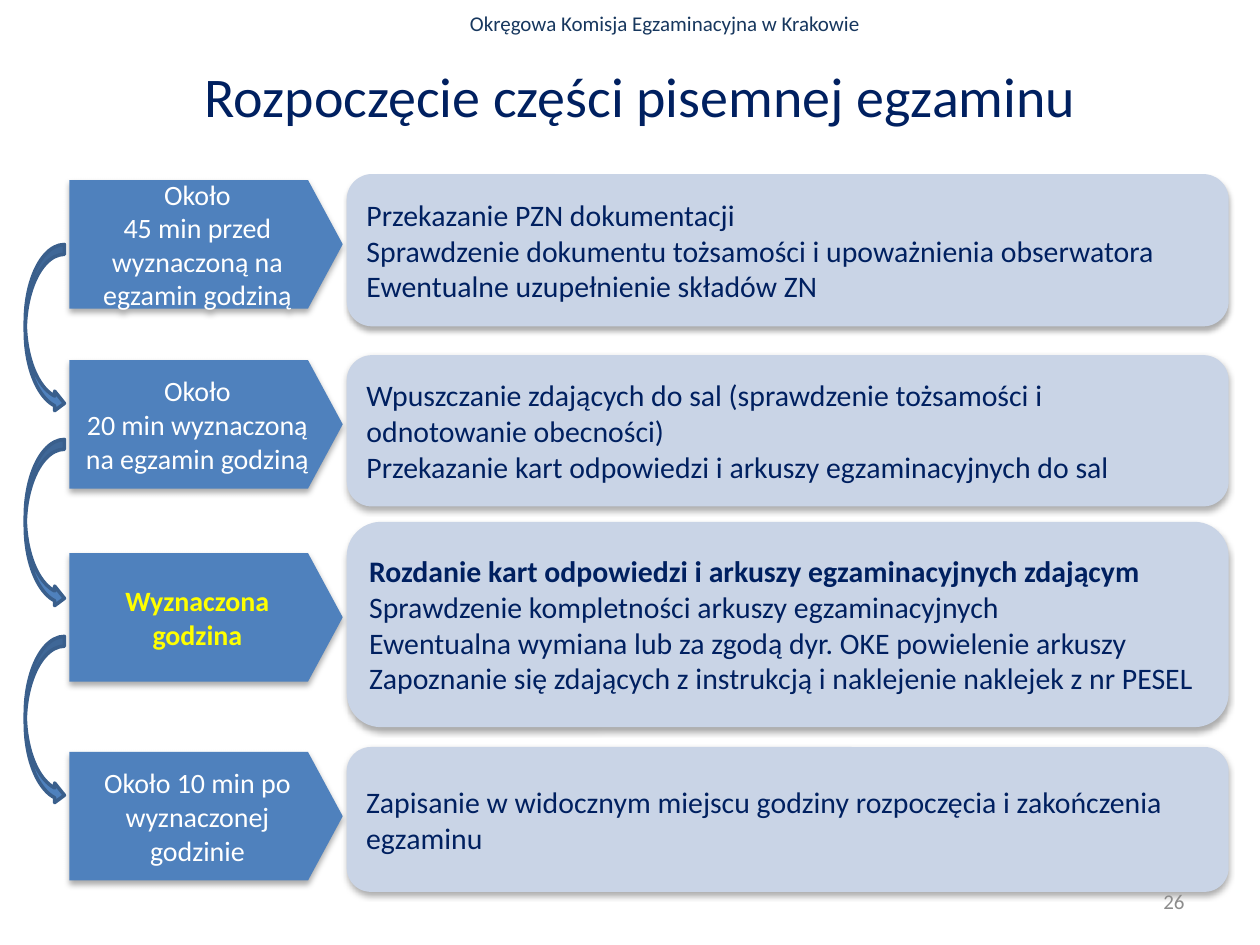
from lxml import etree
from pptx import Presentation
from pptx import util as u
from pptx.dml.color import RGBColor
from pptx.enum import shapes, text
from pptx.oxml.ns import qn

NAVY = RGBColor(0x00, 0x20, 0x60)
HEADER_BLUE = RGBColor(0x17, 0x37, 0x5E)
BLUE = RGBColor(0x4F, 0x81, 0xBD)
DARK_BLUE = RGBColor(0x3A, 0x5F, 0x8C)
PALE_BLUE = RGBColor(0xC9, 0xD4, 0xE6)
WHITE = RGBColor(0xFF, 0xFF, 0xFF)
YELLOW = RGBColor(0xFF, 0xFF, 0x00)
GREY = RGBColor(0x8C, 0x8C, 0x8C)

FONT = "Calibri"
PLATE_LEFT, PLATE_WIDTH, PLATE_HEIGHT = 1.4, 5.51, 2.59
CARD_LEFT, CARD_WIDTH = 6.99, 17.78
ARROW_LEFT, ARROW_WIDTH, ARROW_HEIGHT = 0.51, 0.79, 3.4
ARROW_TOPS = (4.93, 8.86, 12.83)

# Each stage: plate top, plate lines, card top, card height, card lines, highlighted
STAGES = [
    (3.63, ["Około", "45 min przed wyznaczoną na egzamin godziną"],
     3.51, 3.07,
     ["Przekazanie PZN dokumentacji",
      "Sprawdzenie dokumentu tożsamości i upoważnienia obserwatora",
      "Ewentualne uzupełnienie składów ZN"], False),
    (7.26, ["Około", "20 min wyznaczoną na egzamin godziną"],
     7.16, 3.05,
     ["Wpuszczanie zdających do sal (sprawdzenie tożsamości i odnotowanie obecności)",
      "Przekazanie kart odpowiedzi i arkuszy egzaminacyjnych do sal"], False),
    (11.15, ["Wyznaczona", "godzina"],
     10.52, 4.14,
     ["Rozdanie kart odpowiedzi i arkuszy egzaminacyjnych zdającym",
      "Sprawdzenie kompletności arkuszy egzaminacyjnych",
      "Ewentualna wymiana lub za zgodą dyr. OKE powielenie arkuszy",
      "Zapoznanie się zdających z instrukcją i naklejenie naklejek z nr PESEL"], True),
    (15.16, ["Około 10 min po wyznaczonej godzinie"],
     15.06, 2.92,
     ["Zapisanie w widocznym miejscu godziny rozpoczęcia i zakończenia egzaminu"], False),
]


def write_text(shape, lines, *, size, color, align=text.PP_ALIGN.LEFT,
               anchor=text.MSO_ANCHOR.MIDDLE, bold_lines=0):
    """Fill a shape with one paragraph per line; the first bold_lines are bold."""
    frame = shape.text_frame
    frame.word_wrap = True
    frame.vertical_anchor = anchor
    for index, line in enumerate(lines):
        paragraph = frame.paragraphs[0] if index == 0 else frame.add_paragraph()
        paragraph.alignment = align
        run = paragraph.add_run()
        run.text = line
        run.font.name = FONT
        run.font.size = u.Pt(size)
        run.font.bold = index < bold_lines
        run.font.color.rgb = color


def add_label(slide, box, line, **text_format):
    shape = slide.shapes.add_textbox(*map(u.Cm, box))
    write_text(shape, [line], **text_format)


def add_filled_shape(slide, kind, box, fill):
    shape = slide.shapes.add_shape(kind, *map(u.Cm, box))
    shape.shadow.inherit = False
    shape.fill.solid()
    shape.fill.fore_color.rgb = fill
    shape.line.fill.background()
    return shape


def add_soft_shadow(shape):
    effects = shape._element.spPr.find(qn("a:effectLst"))
    shadow = etree.SubElement(effects, qn("a:outerShdw"), blurRad=str(u.Pt(3.5)),
                              dist=str(u.Pt(2.2)), dir="5400000", rotWithShape="0")
    color = etree.SubElement(shadow, qn("a:srgbClr"), val="000000")
    etree.SubElement(color, qn("a:alpha"), val="32000")


def add_plate(slide, top, lines, highlighted):
    box = (PLATE_LEFT, top, PLATE_WIDTH, PLATE_HEIGHT)
    plate = add_filled_shape(slide, shapes.MSO_SHAPE.PENTAGON, box, BLUE)
    plate.adjustments[0] = 0.27
    add_soft_shadow(plate)
    write_text(plate, lines, size=16, color=YELLOW if highlighted else WHITE,
               align=text.PP_ALIGN.CENTER, bold_lines=len(lines) if highlighted else 0)


def add_card(slide, top, height, lines, highlighted):
    box = (CARD_LEFT, top, CARD_WIDTH, height)
    card = add_filled_shape(slide, shapes.MSO_SHAPE.ROUNDED_RECTANGLE, box, PALE_BLUE)
    add_soft_shadow(card)
    write_text(card, lines, size=17, color=NAVY, bold_lines=int(highlighted))


def add_curved_arrow(slide, top):
    box = (ARROW_LEFT, top, ARROW_WIDTH, ARROW_HEIGHT)
    arrow = add_filled_shape(slide, shapes.MSO_SHAPE.CURVED_RIGHT_ARROW, box, BLUE)
    arrow.line.color.rgb = DARK_BLUE
    arrow.line.width = u.Pt(2)


def main():
    presentation = Presentation()
    presentation.slide_width = u.Cm(25.4)
    presentation.slide_height = u.Cm(19.05)
    slide = presentation.slides.add_slide(presentation.slide_layouts[6])

    # Header and title
    add_label(slide, (2.9, 0.08, 21.01, 0.76), "Okręgowa Komisja Egzaminacyjna w Krakowie",
              size=12, color=HEADER_BLUE, align=text.PP_ALIGN.CENTER,
              anchor=text.MSO_ANCHOR.TOP)
    add_label(slide, (1.7, 0.33, 22.43, 3.18), "Rozpoczęcie części pisemnej egzaminu",
              size=32, color=NAVY, align=text.PP_ALIGN.CENTER)

    # Stages: time plate and task card
    for plate_top, plate_lines, card_top, card_height, card_lines, highlighted in STAGES:
        add_plate(slide, plate_top, plate_lines, highlighted)
        add_card(slide, card_top, card_height, card_lines, highlighted)

    # Arrows from one stage to the next
    for top in ARROW_TOPS:
        add_curved_arrow(slide, top)

    # Slide number
    add_label(slide, (18.21, 17.65, 5.92, 1.02), "26", size=12, color=GREY,
              align=text.PP_ALIGN.RIGHT)

    presentation.save("out.pptx")


if __name__ == "__main__":
    main()
